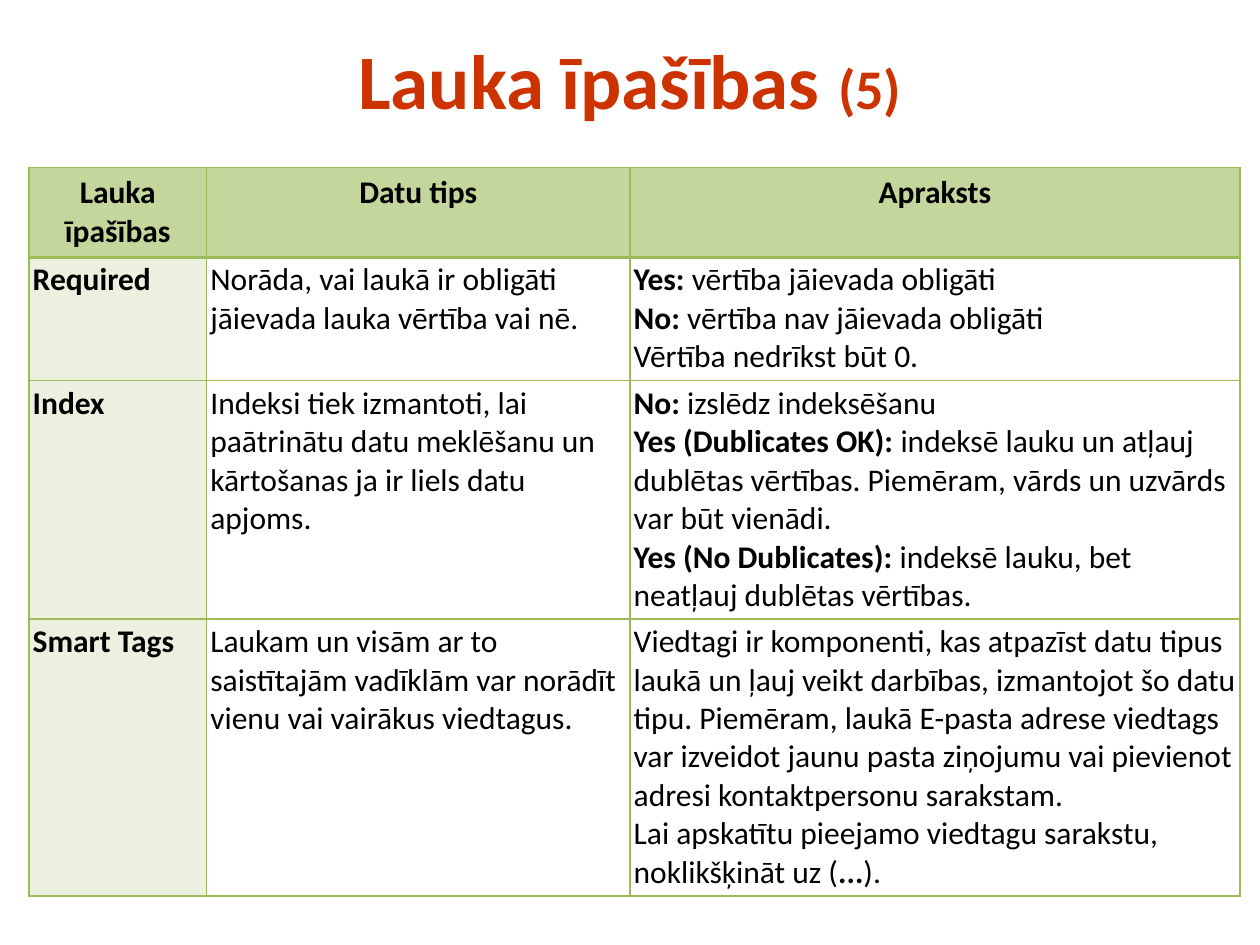
from lxml.etree import SubElement
from pptx import Presentation
from pptx.dml.color import RGBColor
from pptx.enum.text import MSO_ANCHOR, PP_ALIGN
from pptx.oxml.ns import qn
from pptx.util import Inches, Pt

FONT = "Calibri"
BLACK = RGBColor(0x00, 0x00, 0x00)
RED = RGBColor(0xCC, 0x33, 0x00)
GREEN = RGBColor(0x9B, 0xBB, 0x59)
HEADER_GREEN = RGBColor(0xC3, 0xD6, 0x9B)
PALE_GREEN = RGBColor(0xEB, 0xF1, 0xDE)

COLUMN_WIDTHS = [1.41, 3.36, 4.84]
ROW_HEIGHTS = [0.71, 0.98, 1.89, 2.2]
PROPERTIES = [
    ["*Lauka īpašības*", "*Datu tips*", "*Apraksts*"],
    [
        "*Required*",
        "Norāda, vai laukā ir obligāti jāievada lauka vērtība vai nē.",
        "*Yes: *vērtība jāievada obligāti\v*No: *vērtība nav jāievada obligāti\n"
        "Vērtība nedrīkst būt 0.",
    ],
    [
        "*Index*",
        "Indeksi tiek izmantoti, lai paātrinātu datu meklēšanu un kārtošanas "
        "ja ir liels datu apjoms.",
        "*No: *izslēdz indeksēšanu\n"
        "*Yes (Dublicates OK): *indeksē lauku un atļauj dublētas vērtības. "
        "Piemēram, vārds un uzvārds var būt vienādi.\n"
        "*Yes (No Dublicates): *indeksē lauku, bet neatļauj dublētas vērtības.",
    ],
    [
        "*Smart Tags*",
        "Laukam un visām ar to saistītajām vadīklām var norādīt vienu vai "
        "vairākus viedtagus.",
        "Viedtagi ir komponenti, kas atpazīst datu tipus laukā un ļauj veikt "
        "darbības, izmantojot šo datu tipu. Piemēram, laukā E-pasta adrese "
        "viedtags var izveidot jaunu pasta ziņojumu vai pievienot adresi "
        "kontaktpersonu sarakstam.\n"
        "Lai apskatītu pieejamo viedtagu sarakstu, noklikšķināt uz (*...*).",
    ],
]


def add_run(paragraph, text, size=18, color=BLACK, bold=False):
    run = paragraph.add_run()
    run.text = text
    run.font.name = FONT
    run.font.size = Pt(size)
    run.font.bold = bold
    run.font.color.rgb = color


def write_marked(frame, text, align=PP_ALIGN.LEFT):
    for number, content in enumerate(text.split("\n")):
        paragraph = frame.add_paragraph() if number else frame.paragraphs[0]
        paragraph.alignment = align
        for line_number, line in enumerate(content.split("\v")):
            if line_number:
                paragraph.add_line_break()
            for piece_number, piece in enumerate(line.split("*")):
                if piece:
                    add_run(paragraph, piece, bold=piece_number % 2 == 1)


class SlideBuilder:
    def __init__(self, slide):
        self.slide = slide

    def title(self, pieces, left, top, width, height):
        title = self.slide.shapes.title
        title.left, title.top = Inches(left), Inches(top)
        title.width, title.height = Inches(width), Inches(height)
        title.text_frame.vertical_anchor = MSO_ANCHOR.MIDDLE
        heading = title.text_frame.paragraphs[0]
        heading.alignment = PP_ALIGN.CENTER
        for text, size in pieces:
            add_run(heading, text, size=size, color=RED, bold=True)

    def border(self, cell, side, width):
        line = SubElement(cell._tc.get_or_add_tcPr(), qn(f"a:ln{side}"), w=str(Pt(width)))
        fill = SubElement(line, qn("a:solidFill"))
        SubElement(fill, qn("a:srgbClr"), val=str(GREEN))

    def cell(self, cell, text, is_header, is_label, below_header):
        for side in "LRTB":
            thick = (is_header and side == "B") or (below_header and side == "T")
            self.border(cell, side, 2 if thick else 1)
        if is_header or is_label:
            cell.fill.solid()
            cell.fill.fore_color.rgb = HEADER_GREEN if is_header else PALE_GREEN
        else:
            cell.fill.background()
        if not is_header:
            cell.margin_left = cell.margin_right = Inches(0.03)
            cell.margin_top = cell.margin_bottom = Inches(0.03)
        align = PP_ALIGN.CENTER if is_header else PP_ALIGN.LEFT
        write_marked(cell.text_frame, text, align=align)

    def table(self, rows, left, top):
        table = self.slide.shapes.add_table(
            len(rows), len(COLUMN_WIDTHS), Inches(left), Inches(top),
            Inches(sum(COLUMN_WIDTHS)), Inches(sum(ROW_HEIGHTS)),
        ).table
        table.horz_banding = False
        for column, width in zip(table.columns, COLUMN_WIDTHS):
            column.width = Inches(width)
        for row, height in zip(table.rows, ROW_HEIGHTS):
            row.height = Inches(height)
        for row_number, row in enumerate(rows):
            for column_number, text in enumerate(row):
                self.cell(
                    table.cell(row_number, column_number), text,
                    is_header=row_number == 0,
                    is_label=column_number == 0,
                    below_header=row_number == 1,
                )


def main():
    presentation = Presentation()
    presentation.slide_width = Inches(10)
    presentation.slide_height = Inches(7.5)
    builder = SlideBuilder(presentation.slides.add_slide(presentation.slide_layouts[5]))
    builder.title([("Lauka īpašības ", 44), ("(5)", 32)], 0.5, 0, 9, 1.25)
    builder.table(PROPERTIES, 0.23, 1.33)
    presentation.save("out.pptx")


if __name__ == "__main__":
    main()
